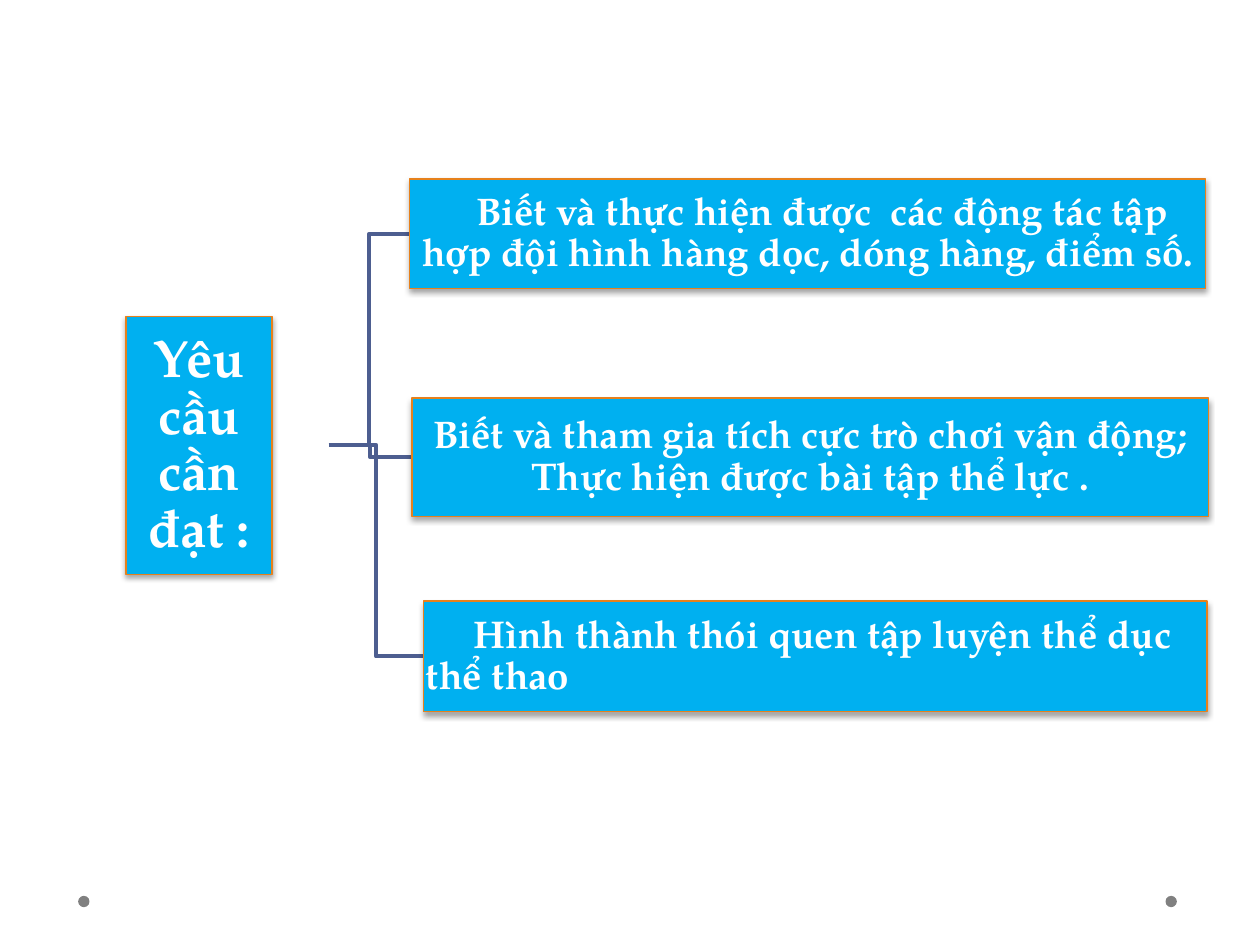
from lxml import etree
from pptx import Presentation
from pptx.dml.color import RGBColor
from pptx.enum.shapes import MSO_SHAPE
from pptx.enum.text import MSO_ANCHOR, PP_ALIGN
from pptx.oxml import parse_xml
from pptx.oxml.ns import nsdecls, qn
from pptx.util import Inches, Pt

RECTANGLE, OVAL = MSO_SHAPE.RECTANGLE, MSO_SHAPE.OVAL
MIDDLE = MSO_ANCHOR.MIDDLE
LEFT, CENTER = PP_ALIGN.LEFT, PP_ALIGN.CENTER
BLANK_LAYOUT = 6
FONT = "TeX Gyre Pagella"
COLORS = {"box": "00B0F0", "border": "E6811C", "branch": "4D5E90",
          "dot": "808080", "text": "FFFFFF", "shadow": "000000"}


def rgb(name):
    return RGBColor.from_string(COLORS[name])


class SlideBuilder:
    def __init__(self, page):
        self.page = page

    def dot(self, left, top, size):
        dot = self.page.shapes.add_shape(
            OVAL, Inches(left), Inches(top), Inches(size), Inches(size))
        dot.shadow.inherit = False
        dot.fill.solid()
        dot.fill.fore_color.rgb = rgb("dot")
        dot.line.fill.background()

    def branch(self, start, end):
        (x1, y1), (x2, y2) = start, end
        middle = (x1 + x2) / 2
        builder = self.page.shapes.build_freeform(Inches(x1), Inches(y1))
        corners = [(middle, y1), (middle, y2), (x2, y2)]
        builder.add_line_segments(
            [(Inches(x), Inches(y)) for x, y in corners], close=False)
        branch = builder.convert_to_shape()
        branch.shadow.inherit = False
        branch.fill.background()
        branch.line.color.rgb = rgb("branch")
        branch.line.width = Pt(2.25)

    def box(self, text, left, top, width, height, size=22, align=CENTER, indent=0):
        box = self.page.shapes.add_shape(
            RECTANGLE, Inches(left), Inches(top), Inches(width), Inches(height))
        box.fill.solid()
        box.fill.fore_color.rgb = rgb("box")
        box.line.color.rgb = rgb("border")
        box.line.width = Pt(0.75)
        self.drop_shadow(box)
        frame = box.text_frame
        frame.word_wrap = True
        frame.vertical_anchor = MIDDLE
        frame.margin_left = frame.margin_right = Inches(0.02)
        frame.margin_top = frame.margin_bottom = Inches(0.02)
        para = frame.paragraphs[0]
        para.text = text
        para.alignment = align
        para.line_spacing = 0.9
        para.font.name = FONT
        para.font.size = Pt(size)
        para.font.bold = True
        para.font.color.rgb = rgb("text")
        if indent:
            para._p.get_or_add_pPr().set("indent", str(Inches(indent)))

    def drop_shadow(self, shape):
        shape.shadow.inherit = False
        effects = shape._element.spPr.find(qn("a:effectLst"))
        outer = parse_xml(f'<a:outerShdw {nsdecls("a")} rotWithShape="0"/>')
        outer.set("blurRad", str(Pt(3.1)))
        outer.set("dist", str(Pt(1.8)))
        outer.set("dir", "5400000")
        color = etree.SubElement(outer, qn("a:srgbClr"), val=COLORS["shadow"])
        etree.SubElement(color, qn("a:alpha"), val="35000")
        effects.append(outer)


def main():
    deck = Presentation()
    deck.slide_width, deck.slide_height = Inches(10), Inches(7.5)
    page = deck.slides.add_slide(deck.slide_layouts[BLANK_LAYOUT])
    builder = SlideBuilder(page)

    for left in (9.25, 0.62):
        builder.dot(left, 7.11, 0.09)

    goals = [
        ("Biết và thực hiện được  các động tác tập hợp đội hình hàng dọc, "
         "dóng hàng, điểm số.", 3.25, 1.42, 6.32, 0.87, CENTER, 0.23),
        ("Biết và tham gia tích cực trò chơi vận động; "
         "Thực hiện được bài tập thể lực .", 3.27, 3.16, 6.32, 0.94, CENTER, 0),
        ("Hình thành thói quen tập luyện thể dục thể thao",
         3.36, 4.77, 6.22, 0.88, LEFT, 0.38),
    ]
    for _, left, top, _, height, _, _ in reversed(goals):
        builder.branch((2.61, 3.53), (left, top + height / 2))
    builder.box("Yêu cầu cần đạt :", 1, 2.51, 1.16, 2.05, size=30)
    for text, left, top, width, height, align, indent in goals:
        builder.box(text, left, top, width, height, align=align, indent=indent)

    deck.save("out.pptx")


if __name__ == "__main__":
    main()
